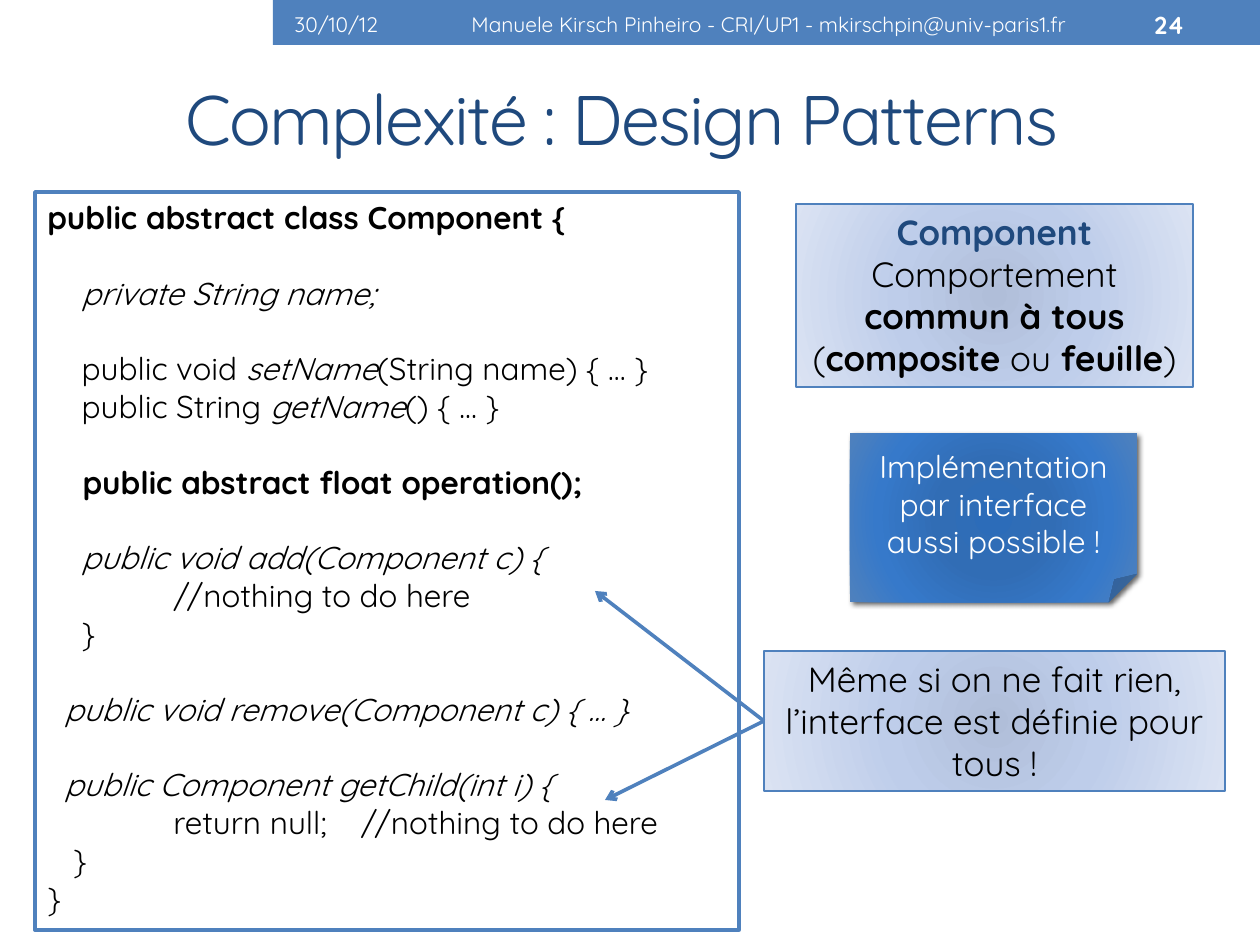
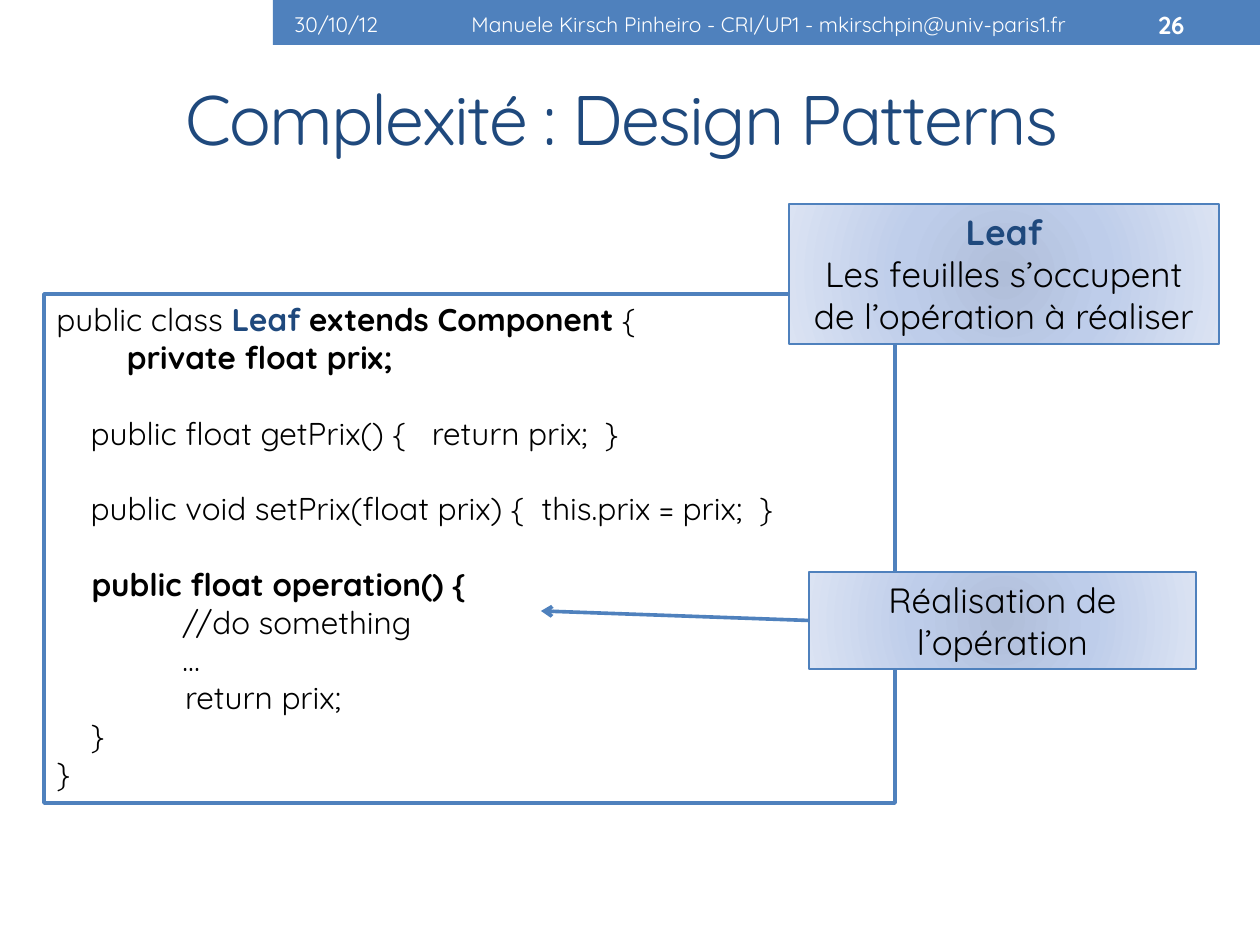
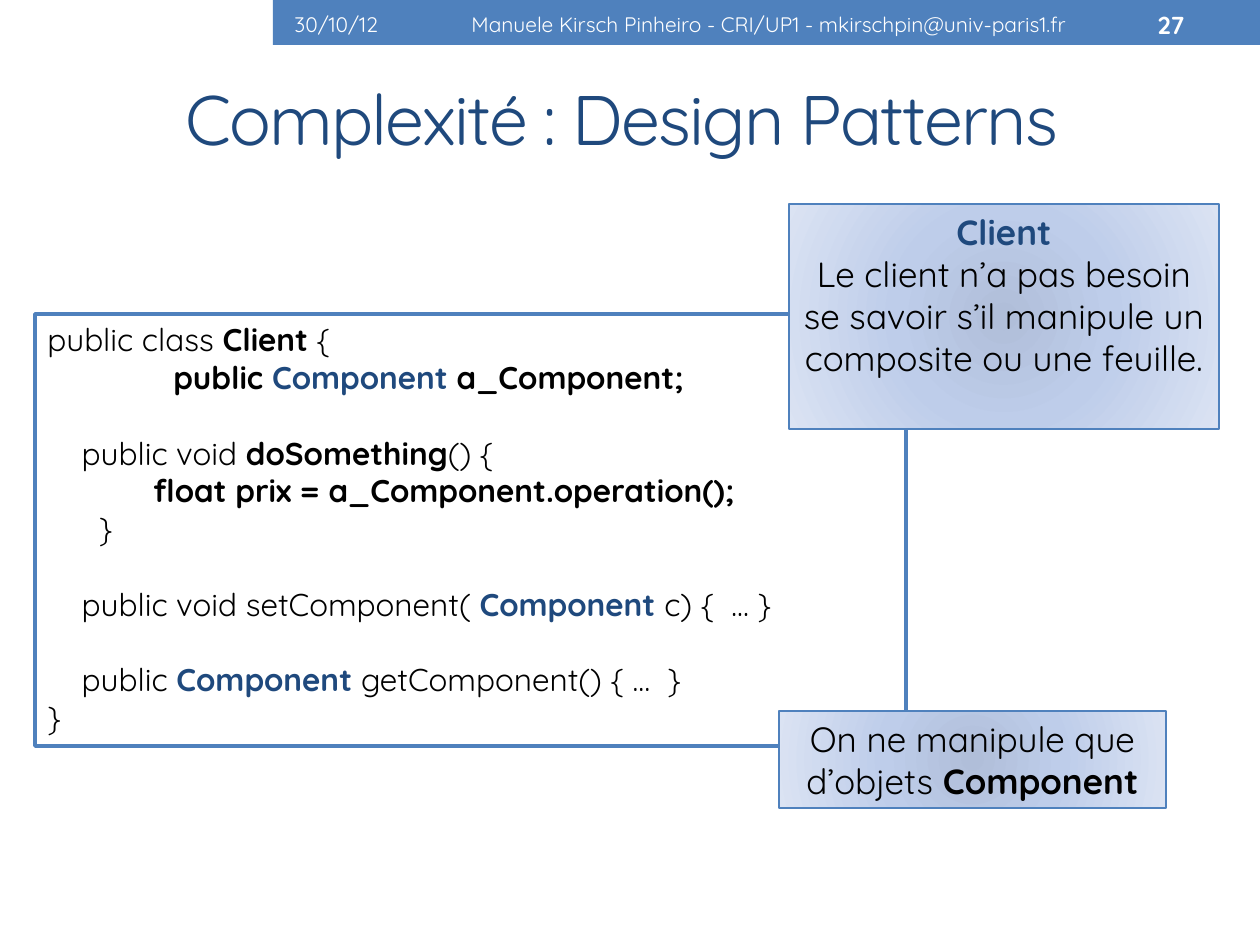
from lxml.etree import SubElement
from pptx import Presentation
from pptx.dml.color import RGBColor
from pptx.enum.shapes import MSO_CONNECTOR, MSO_SHAPE
from pptx.enum.text import MSO_ANCHOR, PP_ALIGN
from pptx.oxml import parse_xml
from pptx.oxml.ns import nsdecls, qn
from pptx.util import Pt

SCALE = 914400 / 126
FONT = "Quicksand"
BLUE = RGBColor(0x4F, 0x81, 0xBD)
NAVY = RGBColor(0x1F, 0x49, 0x7D)
BLACK = RGBColor(0, 0, 0)
WHITE = RGBColor(255, 255, 255)
PALE = [(0, RGBColor(0xB0, 0xBE, 0xD9)), (45, RGBColor(0xBE, 0xCD, 0xEA)),
        (100, RGBColor(0xDB, 0xE3, 0xF3))]
DEEP = [(0, RGBColor(0x2C, 0x6C, 0xB9)), (34, RGBColor(0x31, 0x6D, 0xB5)),
        (70, RGBColor(0x36, 0x79, 0xCA)), (100, BLUE)]
LEFT, MID, RIGHT = PP_ALIGN.LEFT, PP_ALIGN.CENTER, PP_ALIGN.RIGHT
TITLE = "Complexité : Design Patterns "
DATE = "30/10/12"
AUTHOR = "Manuele Kirsch Pinheiro - CRI/UP1 - mkirschpin@univ-paris1.fr"


def emu(*px):
    return [round(n * SCALE) for n in px]


def cut(text):
    """Cut marked text into (words, marks): * bold, ~ italic, # bold navy."""
    parts, marks, word = [], set(), ""
    for char in text:
        if char in "*~#":
            if word:
                parts.append((word, frozenset(marks)))
            marks ^= {char}
            word = ""
        else:
            word += char
    return parts + [(word, frozenset(marks))] if word else parts


def mark(font, marks):
    if marks & {"*", "#"}:
        font.bold = True
    if "~" in marks:
        font.italic = True
    if "#" in marks:
        font.color.rgb = NAVY


class Deck:
    def __init__(self):
        self.prs = Presentation()
        self.prs.slide_width, self.prs.slide_height = emu(1260, 945)
        self.slide = None

    def put(self, frame, lines, size, color=BLACK, align=LEFT,
            anchor=MSO_ANCHOR.TOP):
        """Fill a frame; an empty line becomes space before the next one."""
        frame.word_wrap = True
        frame.vertical_anchor = anchor
        para, gap = None, False
        for line in lines:
            if not line:
                gap = True
                continue
            para = frame.add_paragraph() if para else frame.paragraphs[0]
            para.alignment = align
            if gap:
                para.space_before = Pt(size * 1.2)
                gap = False
            if "\t" in line:
                tabs = SubElement(para._p.get_or_add_pPr(), qn("a:tabLst"))
                SubElement(tabs, qn("a:tab"), pos="914400", algn="l")
            font = para.font
            font.name, font.size, font.color.rgb = FONT, Pt(size), color
            parts = cut(line)
            for word, marks in parts:
                run = para.add_run()
                run.text = word
                mark(font if len(parts) == 1 else run.font, marks)

    def page(self, number):
        """Start a slide with its band, title and header texts."""
        self.slide = self.prs.slides.add_slide(self.prs.slide_layouts[5])
        self.box((273, 0, 987, 45), BLUE)
        title = self.slide.shapes.title
        title.left, title.top, title.width, title.height = emu(64, 55, 1133, 126)
        self.put(title.text_frame, [TITLE], 40, NAVY, MID, MSO_ANCHOR.MIDDLE)
        run = title.text_frame.paragraphs[0].runs[0]
        run._r.get_or_add_rPr().set("spc", "-100")
        self.label(282, 149, DATE, 12, LEFT)
        self.label(422, 694, AUTHOR, 12, MID)
        self.label(1126, 71, f"*{number}*", 14, RIGHT)

    def label(self, left, width, text, size, align):
        box = self.slide.shapes.add_textbox(*emu(left, 3, width, 43))
        self.put(box.text_frame, [text], size, WHITE, align, MSO_ANCHOR.MIDDLE)

    def box(self, area, fill, edge=None, kind=MSO_SHAPE.RECTANGLE):
        """Add a shape; fill is a colour or a list of gradient stops."""
        shape = self.slide.shapes.add_shape(kind, *emu(*area))
        shape.shadow.inherit = False
        if isinstance(fill, list):
            self.glow(shape, fill)
        else:
            shape.fill.solid()
            shape.fill.fore_color.rgb = fill
        if edge:
            shape.line.color.rgb = BLUE
            shape.line.width = Pt(edge)
        else:
            shape.line.fill.background()
        return shape

    def glow(self, shape, stops):
        """Give a shape a round gradient."""
        shape.fill.gradient()
        props = shape._element.spPr
        inner = "".join(
            f'<a:gs pos="{pos * 1000}"><a:srgbClr val="{color}"/></a:gs>'
            for pos, color in stops)
        props.replace(props.find(qn("a:gradFill")), parse_xml(
            f'<a:gradFill {nsdecls("a")} rotWithShape="1"><a:gsLst>{inner}</a:gsLst>'
            '<a:path path="circle"><a:fillToRect l="100000" t="100000" '
            'r="100000" b="100000"/></a:path></a:gradFill>'))

    def code(self, area, text):
        shape = self.box(area, WHITE, 2.08)
        self.put(shape.text_frame, text.strip("\n").split("\n"), 18)

    def callout(self, area, *lines):
        shape = self.box(area, PALE, 0.75)
        self.put(shape.text_frame, lines, 20, align=MID)
        return shape

    def note(self, area, text):
        shape = self.box(area, DEEP, kind=MSO_SHAPE.FOLDED_CORNER)
        effects = shape._element.spPr.find(qn("a:effectLst"))
        effects.append(parse_xml(
            f'<a:outerShdw {nsdecls("a")} blurRad="{Pt(3)}" dist="{Pt(2)}" '
            'dir="2700000"><a:srgbClr val="000000"><a:alpha val="60000"/>'
            '</a:srgbClr></a:outerShdw>'))
        self.put(shape.text_frame, [text], 18, WHITE, MID, MSO_ANCHOR.MIDDLE)

    def arrow(self, source, left, top):
        """Point from the left side of a callout to a place in the code."""
        line = self.slide.shapes.add_connector(
            MSO_CONNECTOR.STRAIGHT, source.left,
            source.top + source.height // 2, *emu(left, top))
        line.begin_connect(source, 1)
        line.line.color.rgb = BLUE
        line.line.width = Pt(2.08)
        props = line._element.spPr
        SubElement(props.find(qn("a:ln")), qn("a:tailEnd"), type="arrow")
        SubElement(props, qn("a:effectLst"))


COMPONENT = """
*public abstract class Component {*

~    private String name;~

    public void ~setName~(String name) { … }
    public String ~getName~() { … }

*    public abstract float operation();*

~    public void add(Component c) {~
\t//nothing to do here
    }

~  public void remove(Component c) { … }~

~  public Component getChild(int i) {~
\treturn null;    //nothing to do here
   }
}
"""

LEAF = """
public class #Leaf #*extends Component* {
*        private float prix;*

    public float getPrix() {   return prix;  }

    public void setPrix(float prix) {  this.prix = prix;  }

*    public float operation() {*
\t//do something
\t…
               return prix;
    }
}
"""

CLIENT = """
public class *Client* {
*\tpublic *#Component #*a_Component;*

    public void *doSomething*() {
*            float prix = a_Component.operation();*
      }

    public void setComponent( #Component #c) {  … }

    public #Component #getComponent() { …  }
}
"""


def main():
    deck = Deck()

    deck.page(24)
    deck.code((35, 192, 704, 738), COMPONENT)
    deck.callout((796, 204, 397, 183), "#Component#",
                 "Comportement *commun à tous *(*composite* ou *feuille*)")
    empty = deck.callout(
        (764, 651, 461, 140),
        "Même si on ne fait rien, l’interface est définie pour tous !")
    deck.arrow(empty, 595, 591)
    deck.arrow(empty, 605, 800)
    deck.note((850, 433, 287, 169),
              "Implémentation par interface aussi possible !")

    deck.page(26)
    deck.code((44, 294, 851, 509), LEAF)
    deck.callout((789, 204, 430, 140), "#Leaf#",
                 "Les feuilles s’occupent de l’opération à réaliser")
    work = deck.callout((809, 572, 387, 97), "Réalisation de l’opération")
    deck.arrow(work, 541, 611)

    deck.page(27)
    deck.code((35, 314, 871, 432), CLIENT)
    deck.callout((789, 204, 430, 225), "#Client#",
                 "Le client n’a pas besoin se savoir s’il manipule "
                 "un composite ou une feuille.")
    deck.callout((779, 711, 387, 97),
                 "On ne manipule que d’objets *Component*")

    deck.prs.save("out.pptx")


if __name__ == "__main__":
    main()
